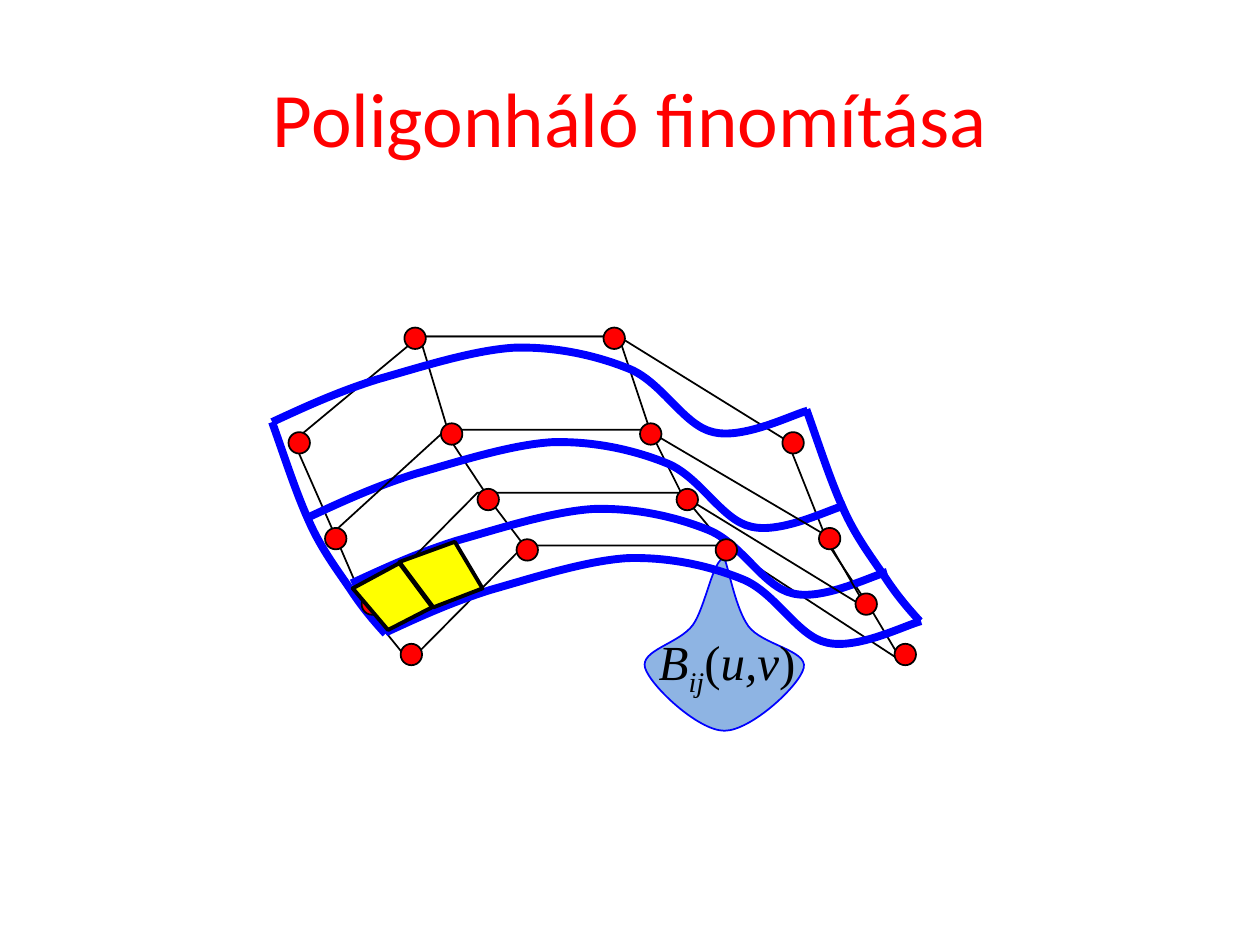
from pptx import Presentation
from pptx import util as u
from pptx.dml.color import RGBColor
from pptx.enum import shapes, text
from pptx.oxml.ns import qn
from lxml import etree

COLORS = {"red": "FF0000", "blue": "0000FF", "sky": "8EB4E3",
          "yellow": "FFFF00", "black": "000000"}
COLUMNS, ROWS = 10, 7.5


def color(name):
    return RGBColor.from_string(COLORS[name])


def shift(points, dx, dy):
    return [(x + dx, y + dy) for x, y in points]


class Canvas:
    """Draws on one page, with places given in grid columns and rows."""

    def __init__(self, deck):
        self.page = deck.slides.add_slide(deck.slide_layouts[5])
        self.column = deck.slide_width / COLUMNS
        self.row = deck.slide_height / ROWS
        self.target = self.page.shapes

    def place(self, x, y):
        return round(x * self.column), round(y * self.row)

    def start_group(self):
        self.target = self.page.shapes.add_group_shape().shapes

    def end_group(self):
        self.target = self.page.shapes

    def paint(self, shape, fill, line, width):
        shape.shadow.inherit = False
        if fill:
            shape.fill.solid()
            shape.fill.fore_color.rgb = color(fill)
        else:
            shape.fill.background()
        shape.line.color.rgb = color(line)
        shape.line.width = u.Pt(width)

    def polygon(self, points, fill=None, line="black", width=1, close=False):
        start, *rest = [self.place(*point) for point in points]
        builder = self.target.build_freeform(*start)
        builder.add_line_segments(rest, close=close)
        shape = builder.convert_to_shape()
        self.paint(shape, fill, line, width)
        return shape

    def curve(self, points, fill=None, line="blue", width=4.5, close=False):
        """Cubic curve: a start, then two control points and an end per segment."""
        shape = self.polygon(points, fill, line, width, close)
        steps = list(shape._element.iter(qn("a:lnTo")))
        for first in range(0, len(steps), 3):
            bezier = etree.Element(qn("a:cubicBezTo"))
            steps[first].addprevious(bezier)
            for step in steps[first:first + 3]:
                bezier.append(step[0])
                step.getparent().remove(step)

    def dot(self, x, y, size=0.17):
        shape = self.target.add_shape(shapes.MSO_SHAPE.OVAL, *self.place(x, y),
                                      *self.place(size, size))
        self.paint(shape, "red", "black", 1)

    def title(self, words):
        box = self.page.shapes.title
        box.left, box.top = self.place(0.5, 0.3)
        box.width, box.height = self.place(9, 1.25)
        box.text_frame.text = words
        box.text_frame.vertical_anchor = text.MSO_ANCHOR.MIDDLE
        para = box.text_frame.paragraphs[0]
        para.alignment = text.PP_ALIGN.CENTER
        self.style(para.runs[0], "Calibri", 44, "red")

    def style(self, span, name, size, ink):
        span.font.name = name
        span.font.size = u.Pt(size)
        span.font.color.rgb = color(ink)

    def formula(self, x, y, width, height, parts):
        """Write parts of (words, italic, baseline shift in percent)."""
        box = self.target.add_textbox(*self.place(x, y), *self.place(width, height))
        box.text_frame.word_wrap = False
        box.text_frame.auto_size = text.MSO_AUTO_SIZE.SHAPE_TO_FIT_TEXT
        para = box.text_frame.paragraphs[0]
        para.alignment = text.PP_ALIGN.CENTER
        for words, italic, baseline in parts:
            span = para.add_run()
            span.text = words
            self.style(span, "Times New Roman", 28, "black")
            span.font.italic = italic
            if baseline:
                span._r.get_or_add_rPr().set("baseline", str(baseline * 1000))


BASIS_DROP = [(5.75, 4.43), (5.66, 4.43), (5.6, 4.82), (5.5, 4.96),
              (5.39, 5.11), (5.08, 5.16), (5.12, 5.3),
              (5.16, 5.44), (5.54, 5.8), (5.75, 5.8),
              (5.96, 5.8), (6.35, 5.44), (6.38, 5.3),
              (6.41, 5.16), (6.05, 5.12), (5.94, 4.97),
              (5.84, 4.83), (5.79, 4.54), (5.75, 4.43)]
NET_OUTLINE = [(2.33, 3.5), (3.33, 2.67), (4.91, 2.67), (6.25, 3.5), (6.58, 4.33),
               (6.91, 4.83), (7.16, 5.25), (5.75, 4.33), (4.16, 4.33),
               (3.25, 5.25), (2.91, 4.83), (2.66, 4.25)]
NET_COLUMNS = [(5.75, 4.33), (5.41, 3.92), (5.16, 3.42), (4.91, 2.67),
               (3.33, 2.67), (3.58, 3.5), (3.91, 4), (4.16, 4.33)]
NET_ROWS = [(2.63, 4.24), (3.54, 3.41), (5.13, 3.41), (6.54, 4.24),
            (6.88, 4.83), (5.38, 3.91), (3.79, 3.91), (2.88, 4.83)]

# Curves are relative to their starting point.
RIB = [(0, 0), (0.26, -0.12), (0.52, -0.24), (0.84, -0.34),
       (1.16, -0.43), (1.59, -0.57), (1.92, -0.59),
       (2.25, -0.6), (2.57, -0.53), (2.84, -0.42),
       (3.1, -0.31), (3.27, 0.03), (3.5, 0.08),
       (3.74, 0.14), (4.13, -0.06), (4.25, -0.09)]
RIB_STARTS = [(2.79, 4.63), (2.46, 4.1), (2.16, 3.35), (3.06, 5.02)]
SIDE = [(0, 0), (0.1, 0.28), (0.19, 0.56), (0.29, 0.78),
        (0.39, 1.01), (0.53, 1.19), (0.63, 1.34),
        (0.73, 1.49), (0.81, 1.58), (0.9, 1.68)]
SIDE_STARTS = [(6.4, 3.25), (2.16, 3.35)]

DOT_ROWS = [(2.29, 2.6), (2.58, 3.36), (2.87, 3.88), (3.18, 4.28)]
DOT_OFFSETS = [(0, 0.83), (0.92, 0), (2.5, 0), (3.92, 0.83)]
PATCHES = [[(3.08, 5), (2.8, 4.67), (3.17, 4.47), (3.43, 4.82)],
           [(3.44, 4.82), (3.17, 4.46), (3.61, 4.3), (3.83, 4.67)]]
BASIS = [("B", True, 0), ("ij", True, -25), ("(", False, 0),
         ("u,v", True, 0), (")", False, 0)]


def main():
    deck = Presentation()
    deck.slide_width, deck.slide_height = u.Inches(10), u.Inches(7.5)
    canvas = Canvas(deck)
    canvas.title("Poligonháló finomítása")
    canvas.curve(BASIS_DROP, "sky", "blue", 1, close=True)
    canvas.polygon(NET_OUTLINE, close=True)
    canvas.polygon(NET_COLUMNS)

    canvas.start_group()
    for curve, starts in ((RIB, RIB_STARTS), (SIDE, SIDE_STARTS)):
        for start in starts:
            canvas.curve(shift(curve, *start))
    canvas.end_group()

    canvas.polygon(NET_ROWS)
    for start in DOT_ROWS:
        for place in shift(DOT_OFFSETS, *start):
            canvas.dot(*place)

    canvas.start_group()
    for patch in PATCHES:
        canvas.polygon(patch, "yellow", width=2.25, close=True)
    canvas.end_group()

    canvas.formula(5.11, 4.96, 1.32, 0.57, BASIS)
    deck.save("out.pptx")


if __name__ == "__main__":
    main()
